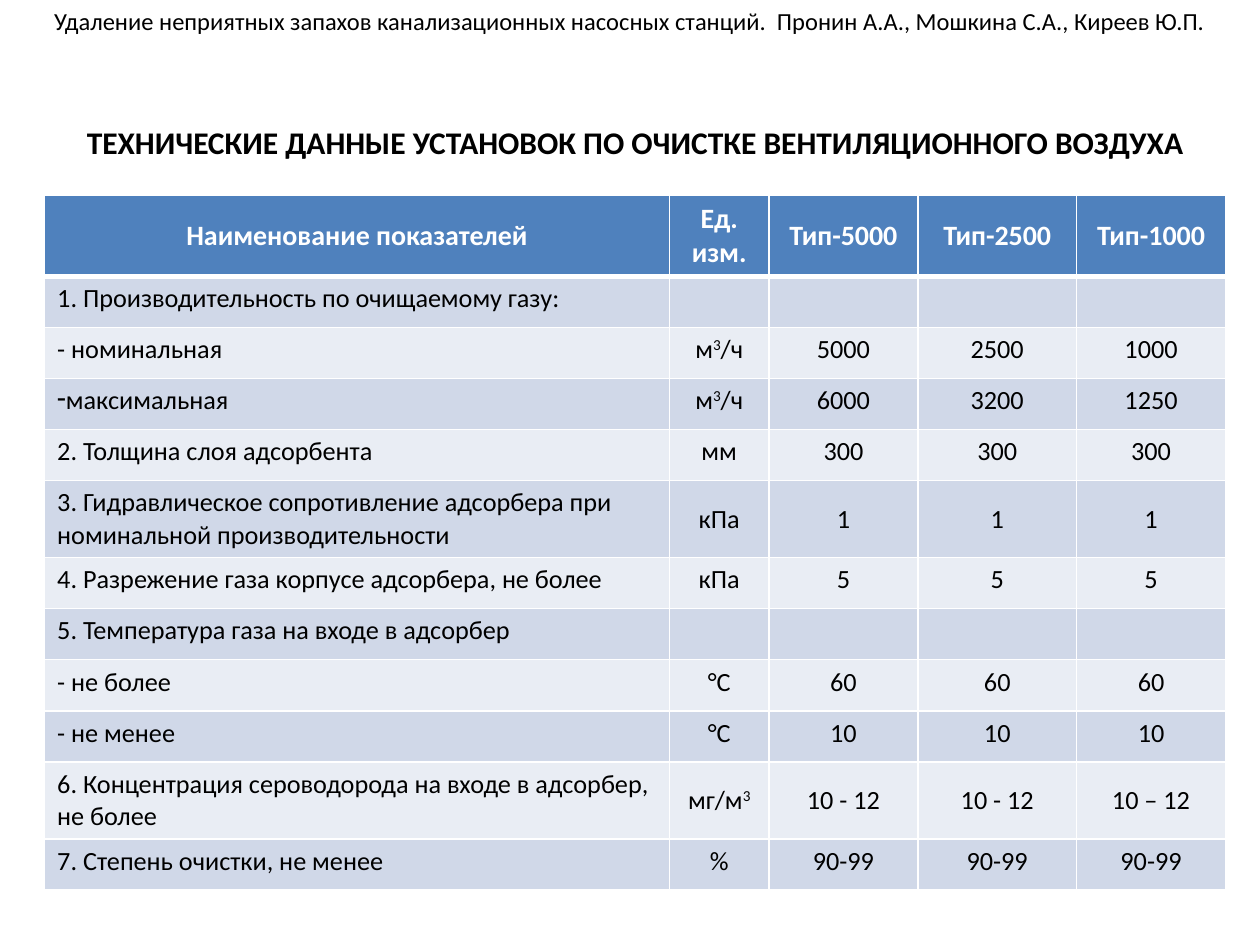
from lxml.etree import SubElement
from pptx import Presentation
from pptx.dml.color import RGBColor
from pptx.enum.shapes import MSO_SHAPE
from pptx.enum.text import MSO_ANCHOR, MSO_AUTO_SIZE, PP_ALIGN
from pptx.oxml.ns import qn
from pptx.util import Pt

BLACK = RGBColor(0x00, 0x00, 0x00)
WHITE = RGBColor(0xFF, 0xFF, 0xFF)
HEADER_BLUE = RGBColor(0x4F, 0x81, 0xBD)
BAND_DARK = RGBColor(0xD0, 0xD8, 0xE8)
BAND_LIGHT = RGBColor(0xE9, 0xED, 0xF4)

FONT = "Calibri"
AUTHORS = ("Удаление неприятных запахов канализационных насосных станций.  "
           "Пронин А.А., Мошкина С.А., Киреев Ю.П.")
TITLE = "ТЕХНИЧЕСКИЕ ДАННЫЕ УСТАНОВОК ПО ОЧИСТКЕ ВЕНТИЛЯЦИОННОГО ВОЗДУХА"
HEADERS = ["Наименование показателей", "Ед. изм.", "Тип-5000", "Тип-2500", "Тип-1000"]
FLOW_UNIT = ("м", "3", "/ч")
DASHED = "максимальная"
INDICATORS = [
    ("1. Производительность по очищаемому газу:", "", "", "", ""),
    ("- номинальная", FLOW_UNIT, "5000", "2500", "1000"),
    (DASHED, FLOW_UNIT, "6000", "3200", "1250"),
    ("2. Толщина слоя адсорбента", "мм", "300", "300", "300"),
    ("3. Гидравлическое сопротивление адсорбера при номинальной производительности",
     "кПа", "1", "1", "1"),
    ("4. Разрежение газа корпусе адсорбера, не более", "кПа", "5", "5", "5"),
    ("5. Температура газа на входе в адсорбер", "", "", "", ""),
    ("- не более", "°C", "60", "60", "60"),
    ("- не менее", "°C", "10", "10", "10"),
    ("6. Концентрация сероводорода на входе в адсорбер, не более",
     ("мг/м", "3"), "10 - 12", "10 - 12", "10 – 12"),
    ("7. Степень очистки, не менее", "%", "90-99", "90-99", "90-99"),
]
TWO_LINE_ROWS = (5, 10)
COLUMN_WIDTHS = [357, 57, 85, 90.8, 85]
ROW_HEIGHT = 29.2


def add_span(para, text, size, color, bold=False, raised=False):
    span = para.add_run()
    span.text = text
    span.font.name = FONT
    span.font.size = Pt(size)
    span.font.bold = bold
    span.font.color.rgb = color
    if raised:
        span.font._element.set("baseline", "30000")


def add_dash_bullet(para):
    properties = para._p.get_or_add_pPr()
    properties.set("marL", "0")
    properties.set("indent", "0")
    SubElement(properties, qn("a:buChar")).set("char", "-")


def add_borders(cell, bottom_width):
    properties = cell._tc.get_or_add_tcPr()
    for side, width in (("L", 1), ("R", 1), ("T", 1), ("B", bottom_width)):
        line = SubElement(properties, qn(f"a:ln{side}"))
        line.set("w", str(Pt(width)))
        fill = SubElement(line, qn("a:solidFill"))
        SubElement(fill, qn("a:srgbClr")).set("val", str(WHITE))


def fill_cell(cell, content, row, column):
    header = row == 0
    add_borders(cell, 3 if header else 1)
    cell.fill.solid()
    cell.fill.fore_color.rgb = HEADER_BLUE if header else (BAND_LIGHT, BAND_DARK)[row % 2]
    if header or (row in TWO_LINE_ROWS and column > 0):
        cell.vertical_anchor = MSO_ANCHOR.MIDDLE
    para = cell.text_frame.paragraphs[0]
    if header or column > 0:
        para.alignment = PP_ALIGN.CENTER
    if content == DASHED:
        add_dash_bullet(para)
    parts = (content,) if isinstance(content, str) else content
    for index, text in enumerate(parts):
        if text:
            add_span(para, text, 16 if header else 15, WHITE if header else BLACK,
                     header, index == 1)


def add_indicator_table(slide):
    rows = [HEADERS] + INDICATORS
    frame = slide.shapes.add_table(len(rows), len(HEADERS), Pt(25.5), Pt(111.5),
                                   Pt(sum(COLUMN_WIDTHS)), Pt(ROW_HEIGHT * len(rows)))
    table = frame.table
    for column, width in zip(table.columns, COLUMN_WIDTHS):
        column.width = Pt(width)
    for row, contents in enumerate(rows):
        table.rows[row].height = Pt(ROW_HEIGHT)
        for column, content in enumerate(contents):
            fill_cell(table.cell(row, column), content, row, column)
    frame.height = Pt(394.5)


def add_line_of_text(box, text, size, alignment, bold=False):
    box.text_frame.word_wrap = True
    box.text_frame.auto_size = MSO_AUTO_SIZE.SHAPE_TO_FIT_TEXT
    para = box.text_frame.paragraphs[0]
    para.alignment = alignment
    add_span(para, text, size, BLACK, bold)


def main():
    deck = Presentation()
    deck.slide_width, deck.slide_height = Pt(720), Pt(540)
    slide = deck.slides.add_slide(deck.slide_layouts[6])
    add_indicator_table(slide)

    banner = slide.shapes.add_shape(MSO_SHAPE.RECTANGLE, 0, 0, Pt(720), Pt(24.2))
    banner.shadow.inherit = False
    banner.fill.solid()
    banner.fill.fore_color.rgb = WHITE
    banner.line.fill.background()
    add_line_of_text(banner, AUTHORS, 14, PP_ALIGN.CENTER)

    title = slide.shapes.add_textbox(Pt(42.5), Pt(66.5), Pt(646.5), Pt(29))
    add_line_of_text(title, TITLE, 18, PP_ALIGN.LEFT, True)
    deck.save("out.pptx")


if __name__ == "__main__":
    main()
